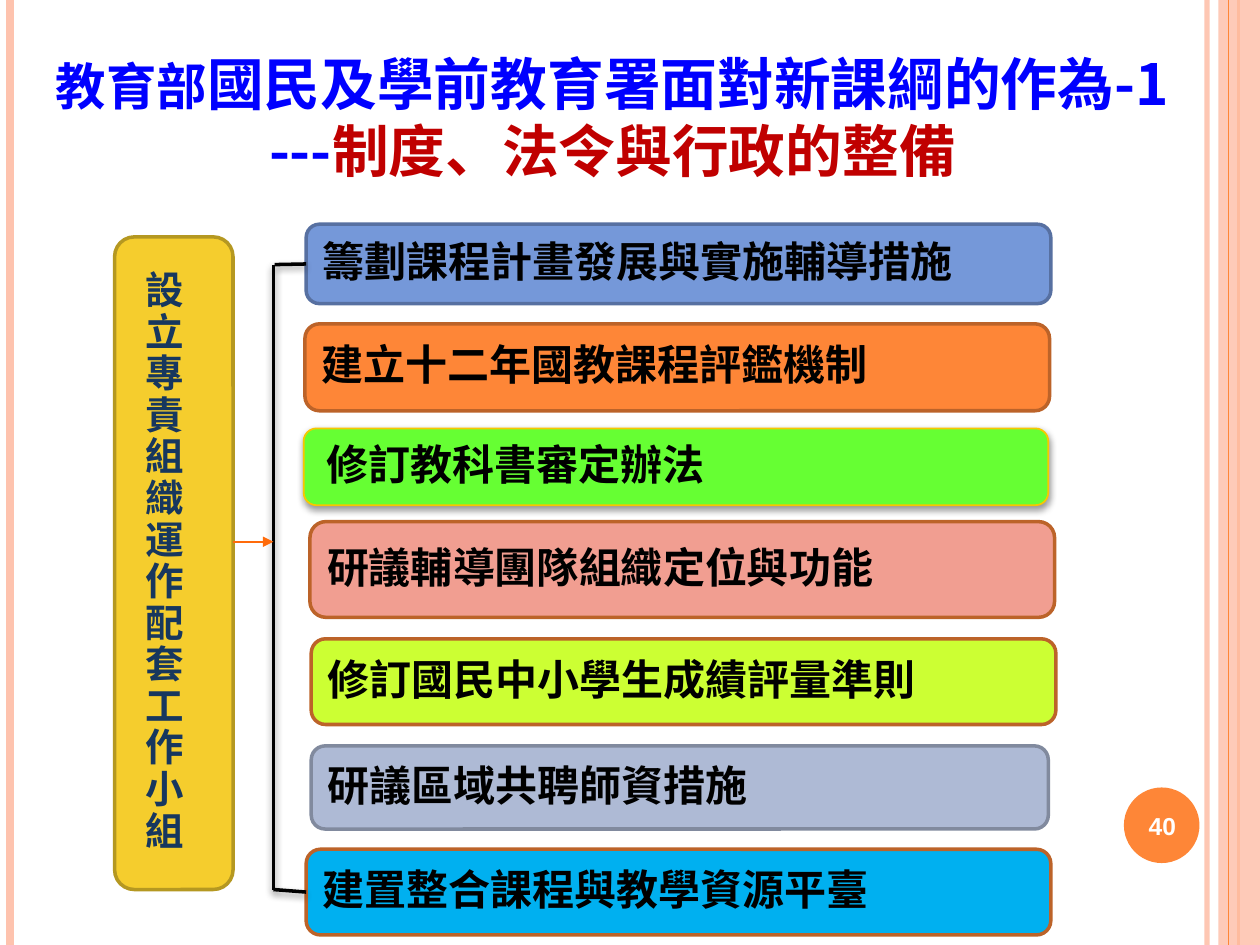
import pptx
import pptx.util
import pptx.dml.color
import pptx.enum.shapes
import pptx.enum.text
import pptx.oxml
import pptx.oxml.ns
from lxml import etree

Inches = pptx.util.Inches
Pt = pptx.util.Pt
SHAPE = pptx.enum.shapes.MSO_SHAPE
ANCHOR = pptx.enum.text.MSO_ANCHOR
ALIGN = pptx.enum.text.PP_ALIGN

CJK = "Noto Sans CJK SC"
COLORS = {
    "white": "FFFFFF", "black": "000000", "blue": "0000FF", "red": "C00000",
    "navy": "17375E", "peach": "FEC3AE", "orange": "FE8637", "arrow": "FF6B0A",
    "rust": "BC6329", "gold": "F5CD2D", "gold edge": "B59821",
    "sky": "7598D9", "sky edge": "5770A1", "green": "66FF33",
    "yellow edge": "F8C700", "salmon": "F19E91", "lime": "CCFF33",
    "slate": "AEBAD5", "slate edge": "818A9E", "cyan": "00B0F0",
}

# text, left, top, width, height, fill, edge
MEASURES = [
    ("籌劃課程計畫發展與實施輔導措施", 2.43, 1.78, 5.91, 0.63, "sky", "sky edge"),
    ("建立十二年國教課程評鑑機制", 2.42, 2.57, 5.91, 0.69, "orange", "rust"),
    ("修訂教科書審定辦法", 2.41, 3.4, 5.91, 0.61, "green", "yellow edge"),
    ("研議輔導團隊組織定位與功能", 2.46, 4.14, 5.91, 0.76, "salmon", "rust"),
    ("修訂國民中小學生成績評量準則", 2.47, 5.07, 5.91, 0.68, "lime", "rust"),
    ("研議區域共聘師資措施", 2.47, 5.92, 5.85, 0.66, "slate", "slate edge"),
    ("建置整合課程與教學資源平臺", 2.43, 6.74, 5.91, 0.68, "cyan", "rust"),
]


def rgb(name):
    return pptx.dml.color.RGBColor.from_string(COLORS[name])


def add_child(parent, tag, **attributes):
    child = etree.SubElement(parent, pptx.oxml.ns.qn(tag))
    for key, value in attributes.items():
        child.set(key, str(value))
    return child


def set_alpha(item, percent):
    """Make the solid colour of a shape's fill or line translucent."""
    color = next(item._element.spPr.iter(pptx.oxml.ns.qn("a:srgbClr")))
    add_child(color, "a:alpha", val=percent * 1000)


def set_effect(item, shadow=False):
    """Switch the theme shadow off, or put a soft drop shadow in its place."""
    properties = item._element.spPr
    for old in properties.findall(pptx.oxml.ns.qn("a:effectLst")):
        properties.remove(old)
    effects = add_child(properties, "a:effectLst")
    if shadow:
        outer = add_child(effects, "a:outerShdw", blurRad=Pt(4), dist=Pt(2),
                          dir=90 * 60000, rotWithShape=0)
        color = add_child(outer, "a:srgbClr", val=COLORS["black"])
        add_child(color, "a:alpha", val=40000)


def add_block(page, kind, left, top, width, height, fill, edge=None,
              weight=2, shadow=False):
    block = page.shapes.add_shape(kind, Inches(left), Inches(top),
                                  Inches(width), Inches(height))
    block.fill.solid()
    block.fill.fore_color.rgb = rgb(fill)
    if edge:
        block.line.color.rgb = rgb(edge)
        block.line.width = Pt(weight)
    else:
        block.line.fill.background()
    set_effect(block, shadow)
    return block


def add_line(page, start, end, color, weight, shadow=False, arrow=False, target=None):
    line = page.shapes.add_connector(pptx.enum.shapes.MSO_CONNECTOR.STRAIGHT,
                                     *map(Inches, start + end))
    if target is not None:
        line.end_connect(target, 1)
    line.line.color.rgb = rgb(color)
    line.line.width = Pt(weight)
    if arrow:
        add_child(line.line._get_or_add_ln(), "a:tailEnd", type="triangle")
    set_effect(line, shadow)
    return line


def add_box(page, left, top, width, height):
    return page.shapes.add_textbox(Inches(left), Inches(top),
                                   Inches(width), Inches(height))


def write(box, spans, size=24, font=CJK, color="black", align=ALIGN.LEFT,
          anchor=ANCHOR.MIDDLE, spacing=None, inset=0.1, bottom=0.05):
    """Fill a box with one paragraph; a span is text plus its own size and colour."""
    frame = box.text_frame
    frame.word_wrap = True
    frame.vertical_anchor = anchor
    frame.margin_left = Inches(inset)
    frame.margin_bottom = Inches(bottom)
    para = frame.paragraphs[0]
    para.alignment = align
    para.line_spacing = spacing
    if isinstance(spans, str):
        spans = [(spans, size, color)]
    for text, span_size, span_color in spans:
        if text == "\n":
            para.add_line_break()
            continue
        span = para.add_run()
        span.text = text
        span.font.size = Pt(span_size)
        span.font.bold = True
        span.font.name = font
        span.font.color.rgb = rgb(span_color)
        add_child(span._r.get_or_add_rPr(), "a:ea", typeface=CJK)


def add_frame(page):
    # Stripes down both edges and the page number disc
    set_alpha(add_line(page, (9.58, 0), (9.58, 7.5), "peach", 3), 93)
    add_line(page, (0.08, 0), (0.08, 7.5), "peach", 4.5)
    add_line(page, (9.83, 0), (9.83, 7.5), "orange", 1.5)
    set_alpha(add_block(page, SHAPE.RECTANGLE, 9.67, 0, 0.33, 7.5, "peach"), 87)
    add_line(page, (9.75, 0), (9.75, 7.5), "orange", 0.75)
    add_block(page, SHAPE.OVAL, 8.92, 6.25, 0.6, 0.6, "orange")
    write(add_box(page, 8.89, 6.27, 0.67, 0.57), "40", size=14, font="Arial",
          color="white", align=ALIGN.CENTER)


def add_title(page):
    spans = [("教育部", 28.8, "blue"),
             ("國民及學前教育署面對新課綱的作為-1", 32.4, "blue"),
             ("\n", None, None),
             ("---", 32.4, "blue"),
             ("制度、法令與行政的整備", 32.4, "red")]
    write(add_box(page, 0, -0.21, 9.72, 2.22), spans, align=ALIGN.CENTER,
          anchor=ANCHOR.BOTTOM, spacing=Pt(38.3), bottom=0.55)


def add_pillar(page):
    add_block(page, SHAPE.ROUNDED_RECTANGLE, 0.91, 1.88, 0.94, 5.18, "gold", "gold edge")
    write(add_box(page, 1.06, 2.1, 0.47, 4.77), "設立專責組織運作配套工作小組",
          size=22, font="Arial", color="navy", anchor=ANCHOR.TOP, spacing=Pt(23.75))


def add_measures(page):
    blocks = []
    for text, left, top, width, height, fill, edge in MEASURES:
        raised = fill == "green"
        block = add_block(page, SHAPE.ROUNDED_RECTANGLE, left, top, width, height,
                          fill, edge, weight=1 if raised else 2, shadow=raised)
        write(block, text, spacing=0.9, inset=0.15 if raised else 0.1)
        blocks.append(block)
    return blocks


def add_bracket(page, first, last):
    add_line(page, (2.18, 2.1), (2.43, 2.1), "black", 2, shadow=True, target=first)
    add_line(page, (2.17, 2.1), (2.17, 7.06), "black", 2, shadow=True)
    add_line(page, (2.17, 7.06), (2.43, 7.08), "black", 2, shadow=True, target=last)
    add_line(page, (1.85, 4.3), (2.17, 4.3), "arrow", 1, arrow=True)


def main():
    deck = pptx.Presentation()
    deck.slide_width = Inches(10)
    deck.slide_height = Inches(7.5)
    page = deck.slides.add_slide(deck.slide_layouts[6])
    add_frame(page)
    add_title(page)
    add_pillar(page)
    blocks = add_measures(page)
    add_bracket(page, blocks[0], blocks[-1])
    deck.save("out.pptx")


if __name__ == "__main__":
    main()
